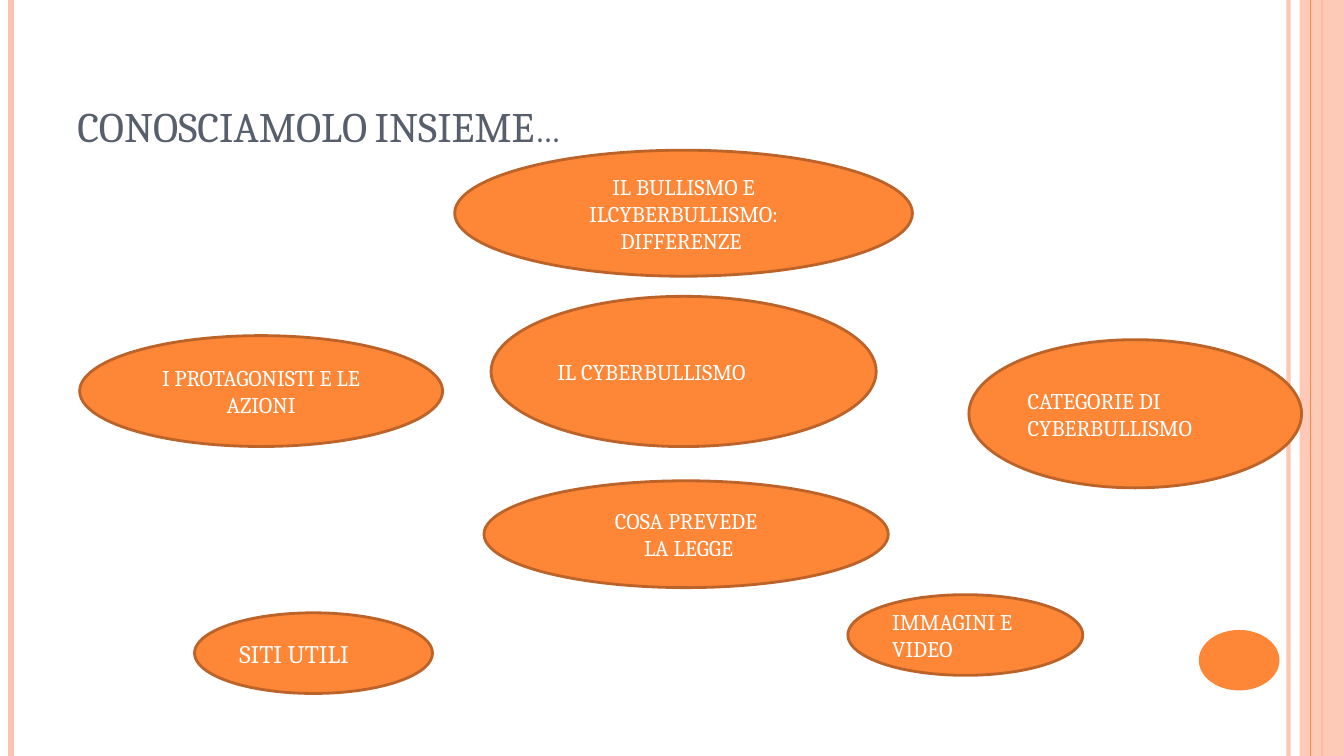
from lxml import etree
from pptx import Presentation
from pptx import util as u
from pptx.dml.color import RGBColor
from pptx.enum import shapes, text
from pptx.oxml.ns import qn

PX = 9144
WIDTH, HEIGHT = 1333, 750
FONT = "Cambria"
COLORS = {
    "orange": "FE8637",
    "rim": "BC6329",
    "peach": "FEC3AE",
    "slate": "575F6D",
    "white": "FFFFFF",
}
LEFT, CENTER = text.PP_ALIGN.LEFT, text.PP_ALIGN.CENTER
TOPICS = [
    ((451, 149, 454, 125), ["IL BULLISMO E ILCYBERBULLISMO: DIFFERENZE "], 16, CENTER),
    ((487, 294, 382, 149), ["IL CYBERBULLISMO"], 16, LEFT),
    ((961, 337, 330, 147), ["CATEGORIE DI CYBERBULLISMO"], 16, LEFT),
    ((79, 333, 360, 110), ["I PROTAGONISTI E LE AZIONI"], 16, CENTER),
    ((193, 608, 236, 80), ["SITI UTILI"], 18, LEFT),
    ((841, 590, 233, 80), ["IMMAGINI E VIDEO"], 16, LEFT),
    ((480, 477, 401, 106), ["COSA PREVEDE", " LA LEGGE"], 16, CENTER),
]


def color(name):
    return RGBColor.from_string(COLORS[name])


def set_alpha(fill, percent):
    solid = fill._xPr.find(qn("a:solidFill"))
    etree.SubElement(solid[0], qn("a:alpha")).set("val", str(percent * 1000))


def write(shape, lines, size=16, ink="white", align=LEFT,
          anchor=text.MSO_ANCHOR.MIDDLE, small_caps=False):
    frame = shape.text_frame
    frame.word_wrap = True
    frame.vertical_anchor = anchor
    for index, line in enumerate(lines):
        para = frame.add_paragraph() if index else frame.paragraphs[0]
        para.alignment = align
        span = para.add_run()
        span.text = line
        span.font.name = FONT
        span.font.size = u.Pt(size)
        span.font.color.rgb = color(ink)
        if small_caps:
            span.font._element.set("cap", "small")


def add_block(page, kind, box, fill, alpha=None, rim=None):
    block = page.shapes.add_shape(kind, *(n * PX for n in box))
    block.shadow.inherit = False
    block.fill.solid()
    block.fill.fore_color.rgb = color(fill)
    if alpha:
        set_alpha(block.fill, alpha)
    if rim:
        block.line.color.rgb = color(rim)
        block.line.width = u.Pt(2)
    else:
        block.line.fill.background()
    return block


def add_stripe(page, x, height, tint, weight, alpha=None):
    stripe = page.shapes.add_connector(
        shapes.MSO_CONNECTOR.STRAIGHT, x * PX, 0, x * PX, height * PX)
    stripe.line.color.rgb = color(tint)
    stripe.line.width = u.Pt(weight)
    if alpha:
        set_alpha(stripe.line.fill, alpha)
    etree.SubElement(stripe._element.spPr, qn("a:effectLst"))


def draw_frame(page, box):
    left, top, width, height = box
    right = left + width
    add_stripe(page, right - 55, height, "peach", 3, 93)
    add_stripe(page, left + 11, height, "peach", 4.5)
    add_stripe(page, right - 22, height, "orange", 1.5)
    add_block(page, shapes.MSO_SHAPE.RECTANGLE,
              (right - 44, top, 44, height), "peach", alpha=87)
    add_stripe(page, right - 33, height, "orange", 0.75)
    add_block(page, shapes.MSO_SHAPE.OVAL,
              (right - 144, top + height - 125, 80, 60), "orange")


def draw_title(page, box):
    title = page.shapes.add_textbox(*(n * PX for n in box))
    write(title, ["CONOSCIAMOLO INSIEME…"], size=30, ink="slate",
          anchor=text.MSO_ANCHOR.BOTTOM, small_caps=True)


def draw_topic(page, box, lines, size, align):
    topic = add_block(page, shapes.MSO_SHAPE.OVAL, box, "orange", rim="rim")
    write(topic, lines, size=size, align=align)


def main():
    deck = Presentation()
    deck.slide_width, deck.slide_height = WIDTH * PX, HEIGHT * PX
    page = deck.slides.add_slide(deck.slide_layouts[6])
    draw_frame(page, (0, 0, WIDTH, HEIGHT))
    draw_title(page, (67, 30, 1089, 125))
    for topic in TOPICS:
        draw_topic(page, *topic)
    deck.save("out.pptx")


if __name__ == "__main__":
    main()
